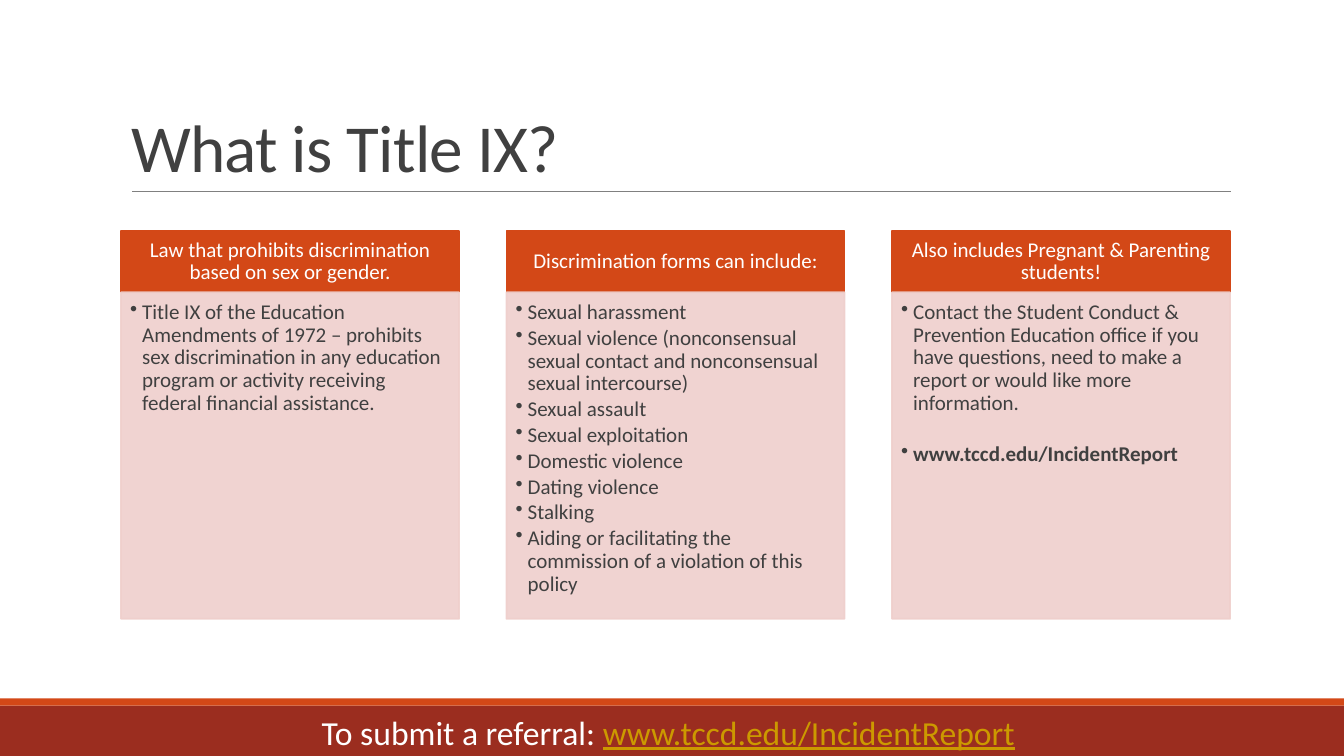
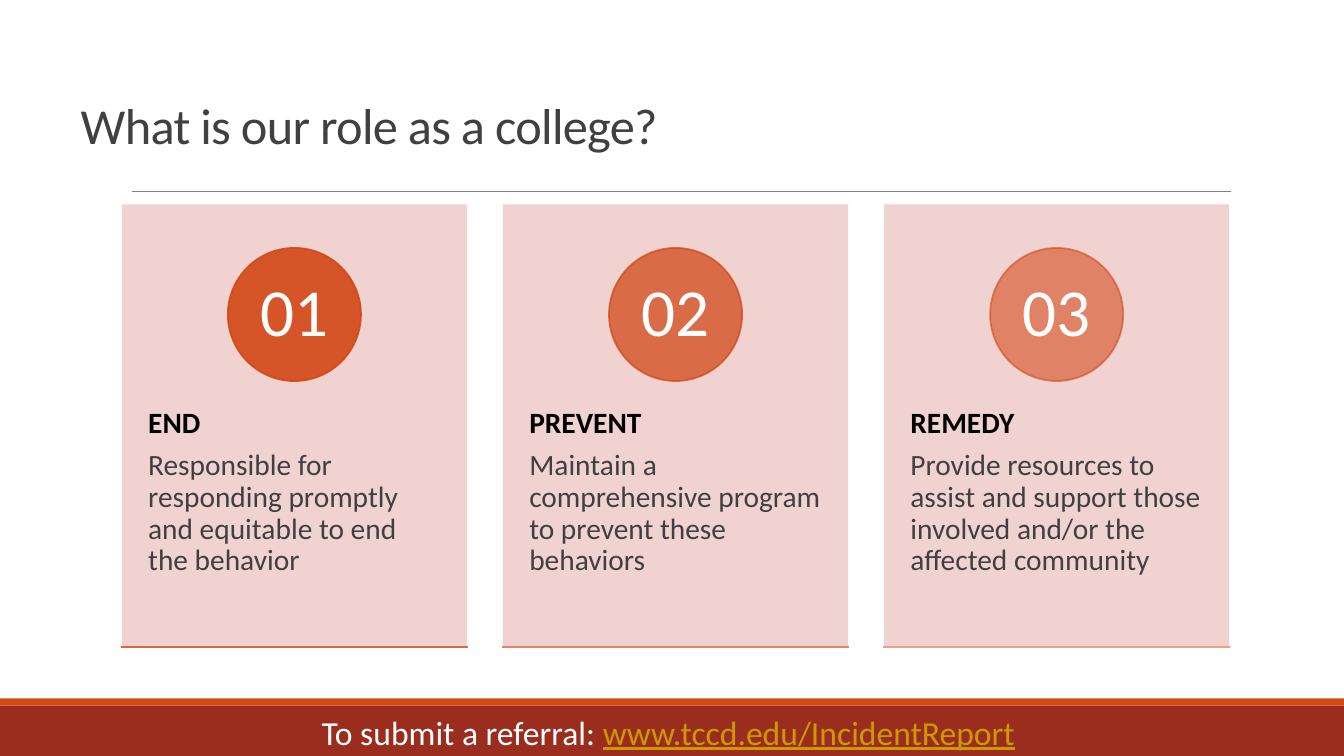
from pptx import Presentation
from pptx.dml.color import RGBColor as RGB
from pptx.enum.shapes import MSO_CONNECTOR as LINE, MSO_SHAPE as SHAPE
from pptx.enum.text import MSO_ANCHOR as ANCHOR, MSO_AUTO_SIZE as FIT, PP_ALIGN as ALIGN
from pptx.oxml.ns import qn
from pptx.util import Inches, Pt
from lxml.etree import SubElement

# Content
SITE = "www.tccd.edu/IncidentReport"
TOPICS = [
    ("Law that prohibits discrimination based on sex or gender.", [
        "Title IX of the Education Amendments of 1972 – prohibits sex discrimination in "
        "any education program or activity receiving federal financial assistance."]),
    ("Discrimination forms can include:", [
        "Sexual harassment",
        "Sexual violence (nonconsensual sexual contact and nonconsensual sexual intercourse)",
        "Sexual assault",
        "Sexual exploitation",
        "Domestic violence",
        "Dating violence",
        "Stalking",
        "Aiding or facilitating the commission of a violation of this policy"]),
    ("Also includes Pregnant & Parenting students!", [
        "Contact the Student Conduct & Prevention Education office if you have questions, "
        "need to make a report or would like more information.",
        [(SITE, {"bold": True, "before": 18})]]),
]
ROLES = [
    ("END", "Responsible for responding promptly and equitable to end the behavior"),
    ("PREVENT", "Maintain a comprehensive program to prevent these behaviors"),
    ("REMEDY", "Provide resources to assist and support those involved "
               "and/or the affected community"),
]


# Theme
class Theme:
    font = "Calibri"
    accent, band, pale = "D34817", "9B2D1F", "EFCFCC"
    ink, black, white, rule, link = "404040", "000000", "FFFFFF", "808080", "CC9900"
    title, small, foot, role, num = 48, 15, 24, 21, 48
    edge = 1.25


WIDE, HIGH = 13.33, 7.5
LEFT, SPAN = 1.2, 11


def grid(count, gap):
    """Left edges and shared width of equal columns."""
    wide = (SPAN - gap * (count - 1)) / count
    return [LEFT + i * (wide + gap) for i in range(count)], wide


def fade(shape, share):
    for tone in shape.element.spPr.iter(qn("a:srgbClr")):
        SubElement(tone, qn("a:alpha"), val=str(share * 1000))


def block(slide, box, fill, line=None, kind=SHAPE.RECTANGLE, alpha=100):
    shape = slide.shapes.add_shape(kind, *map(Inches, box))
    shape.shadow.inherit = False
    shape.fill.solid()
    shape.fill.fore_color.rgb = RGB.from_string(fill)
    if line:
        shape.line.color.rgb = RGB.from_string(line)
        shape.line.width = Pt(Theme.edge)
    else:
        shape.line.fill.background()
    if alpha < 100:
        fade(shape, alpha)
    return shape


def rule(slide, left, top, wide, color, width, alpha=100):
    line = slide.shapes.add_connector(
        LINE.STRAIGHT, *map(Inches, (left, top, left + wide, top)))
    line.line.color.rgb = RGB.from_string(color)
    line.line.width = Pt(width)
    SubElement(line.element.spPr, qn("a:effectLst"))
    if alpha < 100:
        fade(line, alpha)


def write(shape, paras, size, color=Theme.ink, align=ALIGN.LEFT, anchor=ANCHOR.TOP,
          pad=(0.1, 0.05, 0.1, 0.05), space=0.9, after=0, bullet=False, wrap=True, track=0):
    """Each paragraph is a string or a list of (text, format) runs."""
    frame = shape.text_frame
    frame.auto_size, frame.word_wrap, frame.vertical_anchor = FIT.NONE, wrap, anchor
    (frame.margin_left, frame.margin_top,
     frame.margin_right, frame.margin_bottom) = map(Inches, pad)
    for i, runs in enumerate(paras):
        para = frame.add_paragraph() if i else frame.paragraphs[0]
        if bullet:
            props = para._p.get_or_add_pPr()
            props.set("marL", str(Inches(0.12)))
            props.set("indent", str(-Inches(0.12)))
            SubElement(props, qn("a:buChar"), char="•")
        para.alignment, para.line_spacing = align, space
        para.space_before, para.space_after = Pt(0), Pt(after)
        for text, form in [(runs, {})] if isinstance(runs, str) else runs:
            run = para.add_run()
            run.text = text
            font = run.font
            font.name, font.size = Theme.font, Pt(size)
            font.color.rgb = RGB.from_string(form.get("color", color))
            font.bold, font.underline = form.get("bold", False), form.get("under", False)
            if "before" in form:
                para.space_before = Pt(form["before"])
            if track:
                font._element.set("spc", str(track))


def text_box(slide, box, paras, size, **form):
    write(slide.shapes.add_textbox(*map(Inches, box)), paras, size, **form)


def start(deck, title, box, size):
    """Slide with bands, rule, title and footer."""
    slide = deck.slides.add_slide(deck.slide_layouts[5])
    block(slide, (0, 7, WIDE, 0.5), Theme.band)
    block(slide, (0, 6.93, WIDE, 0.07), Theme.accent)
    rule(slide, 1.31, 1.9, 10.9, Theme.rule, 0.5)
    head = slide.shapes.title
    head.left, head.top, head.width, head.height = map(Inches, box)
    write(head, [title], size, anchor=ANCHOR.BOTTOM, space=0.85, track=-50)
    text_box(slide, (2.69, 7.01, 7.95, 0.5),
             [[("To submit a referral: ", {}),
               (SITE, {"color": Theme.link, "under": True}), (" ", {})]],
             Theme.foot, color=Theme.white, align=ALIGN.CENTER, space=1)
    return slide


def topics(deck):
    slide = start(deck, "What is Title IX?", (LEFT, 0.31, SPAN, 1.59), Theme.title)
    lefts, wide = grid(len(TOPICS), 0.47)
    for left, (head, points) in zip(lefts, TOPICS):
        bar = block(slide, (left, 2.29, wide, 0.61), Theme.accent, Theme.accent)
        write(bar, [head], Theme.small, color=Theme.white, align=ALIGN.CENTER,
              anchor=ANCHOR.MIDDLE, pad=(0.12, 0.07, 0.12, 0.07))
        panel = block(slide, (left, 2.9, wide, 3.24), Theme.pale, Theme.pale, alpha=90)
        write(panel, points, Theme.small, pad=(0.09, 0.09, 0.12, 0.13),
              after=2.25, bullet=True)


def roles(deck):
    slide = start(deck, "What is our role as a college?", (0.7, 0.35, 11.93, 1.24), 36)
    lefts, wide = grid(len(ROLES), 0.34)
    top, tall, disc = 2.02, 4.4, 1.32
    for i, (left, (verb, duty)) in enumerate(zip(lefts, ROLES)):
        alpha = 90 - 16 * i
        block(slide, (left, top, wide, tall), Theme.pale, Theme.white, alpha=90)
        text_box(slide, (left, 3.69, wide, 2.64),
                 [[(verb, {"bold": True, "color": Theme.black})], duty],
                 Theme.role, pad=(0.27, 0.36, 0.27, 0.36), after=7.35)
        badge = block(slide, (left + (wide - disc) / 2, top + 0.44, disc, disc),
                      Theme.accent, Theme.accent, SHAPE.OVAL, alpha)
        write(badge, [f"{i + 1:02}"], Theme.num, color=Theme.white, align=ALIGN.CENTER,
              anchor=ANCHOR.MIDDLE, pad=(0.1, 0.01, 0.1, 0.01), wrap=False)
        rule(slide, left, top + tall, wide, Theme.accent, Theme.edge, alpha - 8)


def main():
    deck = Presentation()
    deck.slide_width, deck.slide_height = Inches(WIDE), Inches(HIGH)
    topics(deck)
    roles(deck)
    deck.save("out.pptx")


if __name__ == "__main__":
    main()
